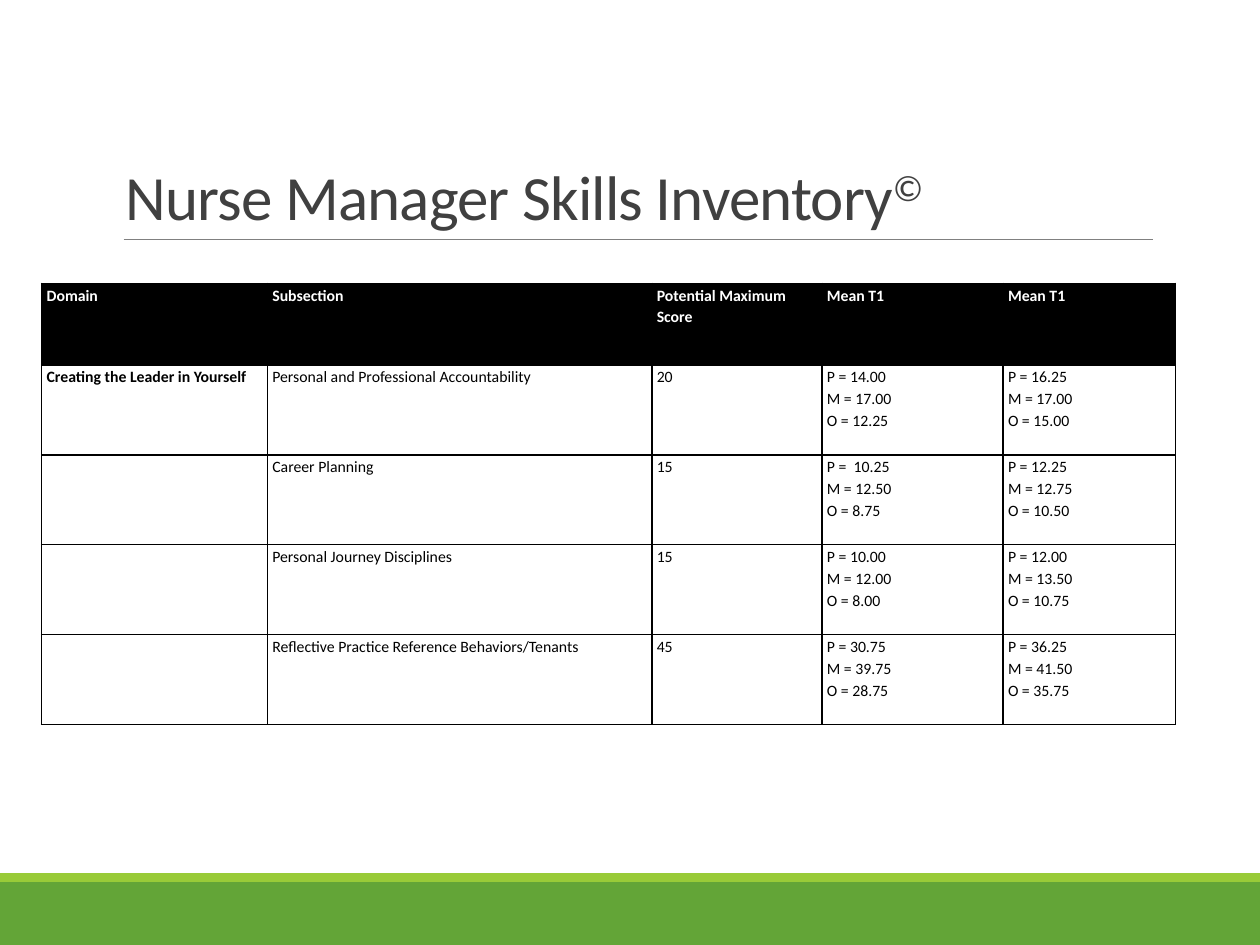
from dataclasses import dataclass
from typing import NamedTuple

from lxml import etree
from pptx import Presentation
from pptx import util as u
from pptx.dml.color import RGBColor
from pptx.enum import shapes, text
from pptx.oxml import ns


@dataclass(frozen=True)
class Theme:
    font: str = "Calibri"
    title_size: float = 36
    table_size: float = 9
    title: str = "404040"
    rule: str = "808080"
    dark: str = "000000"
    light: str = "FFFFFF"
    green: str = "63A537"
    lime: str = "99CB38"


class Band(NamedTuple):
    top: float
    height: float
    color: str


class Skill(NamedTuple):
    domain: str
    subsection: str
    maximum: str
    first: str
    second: str


THEME = Theme()
WIDTH, HEIGHT = 25.4, 19.05
BANDS = [Band(17.78, 1.27, THEME.green), Band(17.6, 0.18, THEME.lime)]
HEADER = Skill("Domain", "Subsection", "Potential Maximum Score", "Mean T1", "Mean T1")
SKILLS = [
    Skill("Creating the Leader in Yourself", "Personal and Professional Accountability", "20",
          "P = 14.00\nM = 17.00\nO = 12.25", "P = 16.25\nM = 17.00\nO = 15.00"),
    Skill("", "Career Planning", "15",
          "P =  10.25\nM = 12.50\nO = 8.75", "P = 12.25\nM = 12.75\nO = 10.50"),
    Skill("", "Personal Journey Disciplines", "15",
          "P = 10.00\nM = 12.00\nO = 8.00", "P = 12.00\nM = 13.50\nO = 10.75"),
    Skill("", "Reflective Practice Reference Behaviors/Tenants", "45",
          "P = 30.75\nM = 39.75\nO = 28.75", "P = 36.25\nM = 41.50\nO = 35.75"),
]
COLUMN_WIDTHS = [4.55, 7.75, 3.43, 3.65, 3.48]
HEADER_HEIGHT, ROW_HEIGHT = 1.65, 1.81


def rgb(color: str) -> RGBColor:
    return RGBColor.from_string(color)


def style_font(font, size: float, color: str, bold: bool = False) -> None:
    font.name = THEME.font
    font.size = u.Pt(size)
    font.bold = bold
    font.color.rgb = rgb(color)


def draw_band(page, band: Band) -> None:
    shape = page.shapes.add_shape(shapes.MSO_SHAPE.RECTANGLE, 0, u.Cm(band.top),
                                  u.Cm(WIDTH), u.Cm(band.height))
    shape.shadow.inherit = False
    shape.fill.solid()
    shape.fill.fore_color.rgb = rgb(band.color)
    shape.line.fill.background()


def draw_rule(page) -> None:
    rule = page.shapes.add_connector(shapes.MSO_CONNECTOR.STRAIGHT, u.Cm(2.49), u.Cm(4.83),
                                     u.Cm(23.24), u.Cm(4.83))
    rule.line.color.rgb = rgb(THEME.rule)
    rule.line.width = u.Pt(0.5)
    etree.SubElement(rule._element.spPr, ns.qn("a:effectLst"))


def draw_title(page) -> None:
    box = page.shapes.add_textbox(u.Cm(2.29), u.Cm(0.79), u.Cm(20.96), u.Cm(4.04))
    frame = box.text_frame
    frame.word_wrap = True
    frame.vertical_anchor = text.MSO_ANCHOR.BOTTOM
    para = frame.paragraphs[0]
    para.line_spacing = 0.85
    for wording in ("Nurse Manager Skills Inventory", "©"):
        span = para.add_run()
        span.text = wording
        style_font(span.font, THEME.title_size, THEME.title)
        span.font._element.set("spc", "-50")
    span.font._element.set("baseline", "30000")


def border_cell(cell) -> None:
    properties = cell._tc.get_or_add_tcPr()
    for position, side in enumerate("LRTB"):
        line = etree.Element(ns.qn(f"a:ln{side}"), w=str(u.Pt(1)))
        fill = etree.SubElement(line, ns.qn("a:solidFill"))
        etree.SubElement(fill, ns.qn("a:srgbClr"), val=THEME.dark)
        properties.insert(position, line)


def fill_cell(cell, wording: str, heading: bool, bold: bool) -> None:
    cell.margin_left = cell.margin_right = u.Cm(0.1)
    cell.margin_top = cell.margin_bottom = 0
    cell.fill.solid()
    cell.fill.fore_color.rgb = rgb(THEME.dark if heading else THEME.light)
    border_cell(cell)
    cell.text_frame.text = wording
    for para in cell.text_frame.paragraphs:
        para.line_spacing = 1.15
        style_font(para.font, THEME.table_size, THEME.dark)
        for span in para.runs:
            style_font(span.font, THEME.table_size,
                       THEME.light if heading else THEME.dark, bold)


def draw_table(page) -> None:
    rows = [HEADER, *SKILLS]
    heights = [HEADER_HEIGHT] + [ROW_HEIGHT] * len(SKILLS)
    table = page.shapes.add_table(len(rows), len(COLUMN_WIDTHS), u.Cm(0.84), u.Cm(5.71),
                                  u.Cm(sum(COLUMN_WIDTHS)), u.Cm(sum(heights))).table
    table.horz_banding = False
    for column, width in zip(table.columns, COLUMN_WIDTHS):
        column.width = u.Cm(width)
    for i, (skill, height) in enumerate(zip(rows, heights)):
        table.rows[i].height = u.Cm(height)
        for j, wording in enumerate(skill):
            fill_cell(table.cell(i, j), wording, heading=i == 0, bold=i == 0 or j == 0)


def main() -> None:
    deck = Presentation()
    deck.slide_width, deck.slide_height = u.Cm(WIDTH), u.Cm(HEIGHT)
    page = deck.slides.add_slide(deck.slide_layouts[6])
    for band in BANDS:
        draw_band(page, band)
    draw_rule(page)
    draw_title(page)
    draw_table(page)
    deck.save("out.pptx")


if __name__ == "__main__":
    main()
